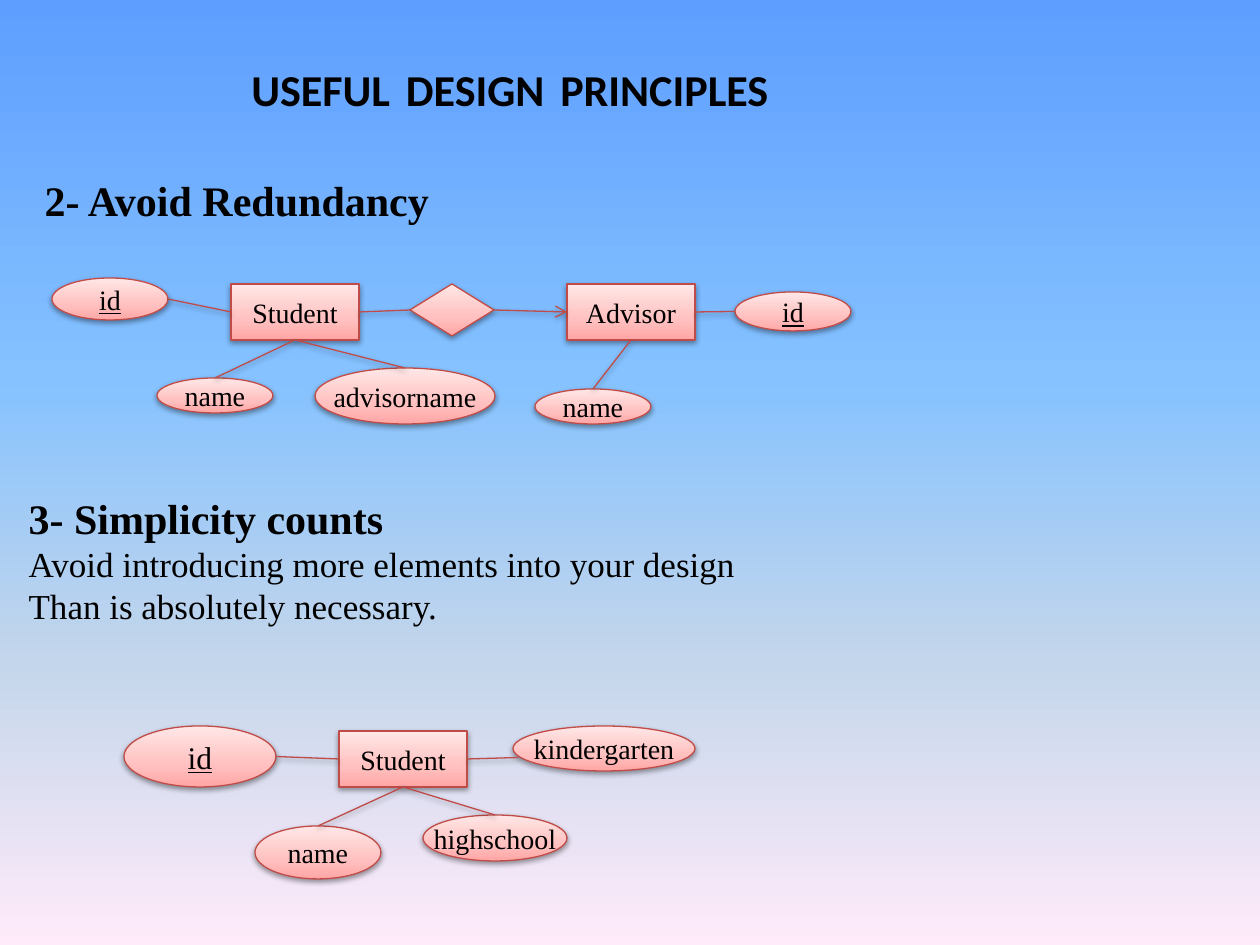
from lxml import etree
from pptx import Presentation
from pptx.dml.color import RGBColor
from pptx.enum.shapes import MSO_CONNECTOR, MSO_SHAPE
from pptx.enum.text import MSO_ANCHOR, MSO_AUTO_SIZE, PP_ALIGN
from pptx.oxml.ns import qn
from pptx.util import Emu, Pt

STRAIGHT = MSO_CONNECTOR.STRAIGHT
RECTANGLE, ELLIPSE, DIAMOND = MSO_SHAPE.RECTANGLE, MSO_SHAPE.OVAL, MSO_SHAPE.FLOWCHART_DECISION
CENTER, LEFT = PP_ALIGN.CENTER, PP_ALIGN.LEFT
TOP_ANCHOR, MIDDLE_ANCHOR = MSO_ANCHOR.TOP, MSO_ANCHOR.MIDDLE
NO_AUTOFIT = MSO_AUTO_SIZE.NONE

SERIF = "Times New Roman"
BLACK, OUTLINE = "000000", "BF4C48"
SKY = [(0, "5E9EFF"), (40, "85C2FF"), (70, "C4D6EB"), (100, "FFEBFA")]
ROSE = [(0, "FFA6A5"), (35, "FFC0BF"), (100, "FFE7E7")]

TITLE = ["USEFUL", " ", "DESIGN", " ", "PRINCIPLES"]
TITLE_BOX = (116, 32, 788, 94)
SECTIONS = [
    ((32, 168, 924, 139), [("2- Avoid Redundancy", 24, True)]),
    ((16, 486, 1169, 301), [
        ("3- Simplicity counts", 24, True),
        ("Avoid introducing more elements into your design", 20, False),
        ("Than is absolutely necessary.", 20, False),
    ]),
]

NODES = {
    "student": (RECTANGLE, "Student", (231, 284, 128, 56), 16, False),
    "student name": (ELLIPSE, "name", (157, 378, 116, 35), 16, False),
    "advisor name": (ELLIPSE, "advisorname", (315, 368, 180, 56), 16, False),
    "student id": (ELLIPSE, "id", (52, 278, 116, 42), 16, True),
    "advisor": (RECTANGLE, "Advisor", (567, 284, 128, 56), 16, False),
    "name of advisor": (ELLIPSE, "name", (535, 389, 116, 35), 16, False),
    "relation": (DIAMOND, "", (410, 284, 84, 52), 16, False),
    "advisor id": (ELLIPSE, "id", (735, 292, 116, 39), 16, True),
    "pupil": (RECTANGLE, "Student", (339, 731, 128, 56), 16, False),
    "pupil name": (ELLIPSE, "name", (255, 826, 126, 53), 16, False),
    "highschool": (ELLIPSE, "highschool", (423, 815, 144, 46), 16, False),
    "pupil id": (ELLIPSE, "id", (124, 726, 152, 61), 18, True),
    "kindergarten": (ELLIPSE, "kindergarten", (513, 726, 182, 45), 16, False),
}
SIDES = {"top": (0.5, 0), "bottom": (0.5, 1), "left": (0, 0.5), "right": (1, 0.5),
         "lower left": (0.03, 0.7)}
LINKS = [
    ("student", "right", "relation", "left", False),
    ("relation", "right", "advisor", "left", True),
    ("advisor", "right", "advisor id", "left", False),
    ("student", "left", "student id", "right", False),
    ("student", "bottom", "student name", "top", False),
    ("student", "bottom", "advisor name", "top", False),
    ("advisor", "bottom", "name of advisor", "top", False),
    ("pupil", "right", "kindergarten", "lower left", False),
    ("pupil", "left", "pupil id", "right", False),
    ("pupil", "bottom", "pupil name", "top", False),
    ("pupil", "bottom", "highschool", "top", False),
]


def px(value):
    return Emu(round(value * 914400 / 126))


def color(value):
    return RGBColor.from_string(value)


def add_child(parent, tag, **attributes):
    child = etree.SubElement(parent, qn(tag))
    for name, value in attributes.items():
        child.set(name, str(value))
    return child


def set_gradient(fill, element, stops, angle):
    fill.gradient()
    fill.gradient_angle = angle
    stop_list = next(element.iter(qn("a:gsLst")))
    for stop in list(stop_list):
        stop_list.remove(stop)
    for position, value in stops:
        stop = add_child(stop_list, "a:gs", pos=position * 1000)
        add_child(stop, "a:srgbClr", val=value)


def set_outline_and_shadow(shape):
    shape.line.color.rgb = color(OUTLINE)
    shape.line.width = Pt(0.75)
    effects = add_child(shape.element.spPr, "a:effectLst")
    shadow = add_child(effects, "a:outerShdw", blurRad=40000, dist=20000,
                       dir=5400000, rotWithShape=0)
    add_child(add_child(shadow, "a:srgbClr", val=BLACK), "a:alpha", val=38000)


def format_run(run, font, size, bold=False, underline=False):
    run.font.name = font
    run.font.size = Pt(size)
    run.font.bold = bold
    run.font.underline = underline
    run.font.color.rgb = color(BLACK)


def place(shape, box):
    shape.left, shape.top, shape.width, shape.height = map(px, box)


def fill_title(shape):
    place(shape, TITLE_BOX)
    frame = shape.text_frame
    frame.auto_size = NO_AUTOFIT
    frame.vertical_anchor = MIDDLE_ANCHOR
    paragraph = frame.paragraphs[0]
    paragraph.alignment = CENTER
    for word in TITLE:
        run = paragraph.add_run()
        run.text = word
        format_run(run, "Calibri", 39.6 if word == " " else 25.2, True)


def fill_section(shape, box, lines):
    place(shape, box)
    frame = shape.text_frame
    frame.text = "\n".join(text for text, size, bold in lines)
    frame.auto_size = NO_AUTOFIT
    frame.vertical_anchor = TOP_ANCHOR
    for paragraph, (text, size, bold) in zip(frame.paragraphs, lines):
        paragraph.alignment = LEFT
        paragraph.space_before = Pt(0)
        properties = paragraph._p.get_or_add_pPr()
        properties.set("marL", "0")
        properties.set("indent", "0")
        add_child(properties, "a:buNone")
        format_run(paragraph.runs[0], SERIF, size, bold)


def add_node(slide, kind, text, box, size, underline):
    shape = slide.shapes.add_shape(kind, *map(px, box))
    set_gradient(shape.fill, shape.element.spPr, ROSE, 90)
    set_outline_and_shadow(shape)
    if text:
        frame = shape.text_frame
        frame.text = text
        frame.word_wrap = False
        frame.vertical_anchor = MIDDLE_ANCHOR
        frame.paragraphs[0].alignment = CENTER
        format_run(frame.paragraphs[0].runs[0], SERIF, size, underline=underline)


def side_point(node, side):
    left, top, width, height = NODES[node][2]
    across, down = SIDES[side]
    return px(left + width * across), px(top + height * down)


def add_link(slide, start, start_side, end, end_side, arrow):
    connector = slide.shapes.add_connector(
        STRAIGHT, *side_point(start, start_side), *side_point(end, end_side))
    set_outline_and_shadow(connector)
    if arrow:
        add_child(connector.line._get_or_add_ln(), "a:tailEnd", type="arrow")


def main():
    presentation = Presentation()
    presentation.slide_width, presentation.slide_height = px(1260), px(945)
    slide = presentation.slides.add_slide(presentation.slide_layouts[3])
    set_gradient(slide.background.fill, slide.element, SKY, 270)
    title, *bodies = slide.placeholders
    fill_title(title)
    for body, (box, lines) in zip(bodies, SECTIONS):
        fill_section(body, box, lines)
    for node in NODES.values():
        add_node(slide, *node)
    for link in LINKS:
        add_link(slide, *link)
    presentation.save("out.pptx")


if __name__ == "__main__":
    main()
